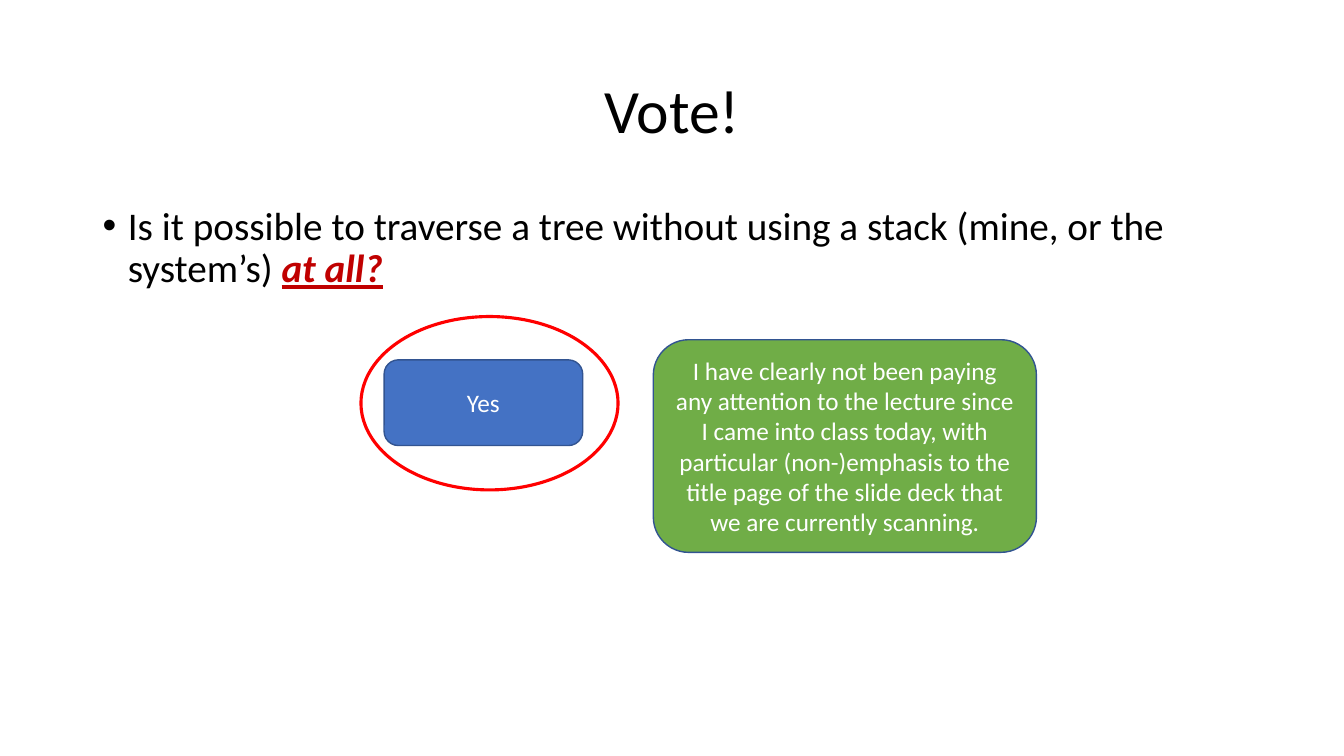
from pptx import Presentation
from pptx.dml.color import RGBColor
from pptx.enum.shapes import MSO_SHAPE as Shape
from pptx.enum.text import MSO_ANCHOR as Anchor, PP_ALIGN as Align
from pptx.util import Inches, Pt
from lxml.etree import SubElement
from pptx.oxml.ns import qn

BLACK = RGBColor(0x00, 0x00, 0x00)
WHITE = RGBColor(0xFF, 0xFF, 0xFF)
BLUE = RGBColor(0x44, 0x72, 0xC4)
GREEN = RGBColor(0x70, 0xAD, 0x47)
NAVY = RGBColor(0x32, 0x54, 0x91)
RED = RGBColor(0xFF, 0x00, 0x00)
DARK_RED = RGBColor(0xC0, 0x00, 0x00)

WIDTH, HEIGHT = 13.33, 7.5
MARGIN = 0.92
COLUMN = WIDTH - 2 * MARGIN

TITLE = [("Vote!", {"size": Pt(44)}, BLACK)]
QUESTION = [
    ("Is it possible to traverse a tree without using a stack (mine, or the system’s) ",
     {"size": Pt(28)}, BLACK),
    ("at all?",
     {"size": Pt(28), "bold": True, "italic": True, "underline": True}, DARK_RED),
]
ANSWERS = [
    ("Yes", (3.81, 3.57, 1.97, 0.85), BLUE),
    ("I have clearly not been paying any attention to the lecture since I came into "
     "class today, with particular (non-)emphasis to the title page of the slide deck "
     "that we are currently scanning.", (6.48, 3.37, 3.8, 2.11), GREEN),
]
CIRCLE = (3.58, 3.14, 2.55, 1.72)


def inches(box):
    return [Inches(length) for length in box]


def write(frame, runs, anchor, **layout):
    frame.word_wrap = True
    frame.vertical_anchor = anchor
    paragraph = frame.paragraphs[0]
    for name, value in layout.items():
        setattr(paragraph, name, value)
    for text, formats, color in runs:
        run = paragraph.add_run()
        run.text = text
        run.font.name = "Calibri"
        run.font.color.rgb = color
        for name, value in formats.items():
            setattr(run.font, name, value)
    return paragraph


def draw(slide, kind, box, fill, line, weight):
    shape = slide.shapes.add_shape(kind, *inches(box))
    shape.shadow.inherit = False
    if fill is None:
        shape.fill.background()
    else:
        shape.fill.solid()
        shape.fill.fore_color.rgb = fill
    shape.line.color.rgb = line
    shape.line.width = Pt(weight)
    return shape


def main():
    deck = Presentation()
    deck.slide_width, deck.slide_height = Inches(WIDTH), Inches(HEIGHT)
    slide = deck.slides.add_slide(deck.slide_layouts[6])

    title = slide.shapes.add_textbox(*inches((MARGIN, 0.4, COLUMN, 1.45)))
    write(title.text_frame, TITLE, Anchor.MIDDLE, alignment=Align.CENTER, line_spacing=0.9)

    question = slide.shapes.add_textbox(*inches((MARGIN, 2, COLUMN, 4.76)))
    bulleted = write(question.text_frame, QUESTION, Anchor.TOP, line_spacing=0.9)
    properties = bulleted._p.get_or_add_pPr()
    properties.set("marL", str(Inches(0.25)))
    properties.set("indent", str(-Inches(0.25)))
    SubElement(properties, qn("a:buFont"), typeface="Arial")
    SubElement(properties, qn("a:buChar"), char="•")

    for text, box, fill in ANSWERS:
        answer = draw(slide, Shape.ROUNDED_RECTANGLE, box, fill, NAVY, 1)
        write(answer.text_frame, [(text, {"size": Pt(18)}, WHITE)], Anchor.MIDDLE,
              alignment=Align.CENTER)

    draw(slide, Shape.OVAL, CIRCLE, None, RED, 2.25)
    deck.save("out.pptx")


if __name__ == "__main__":
    main()
